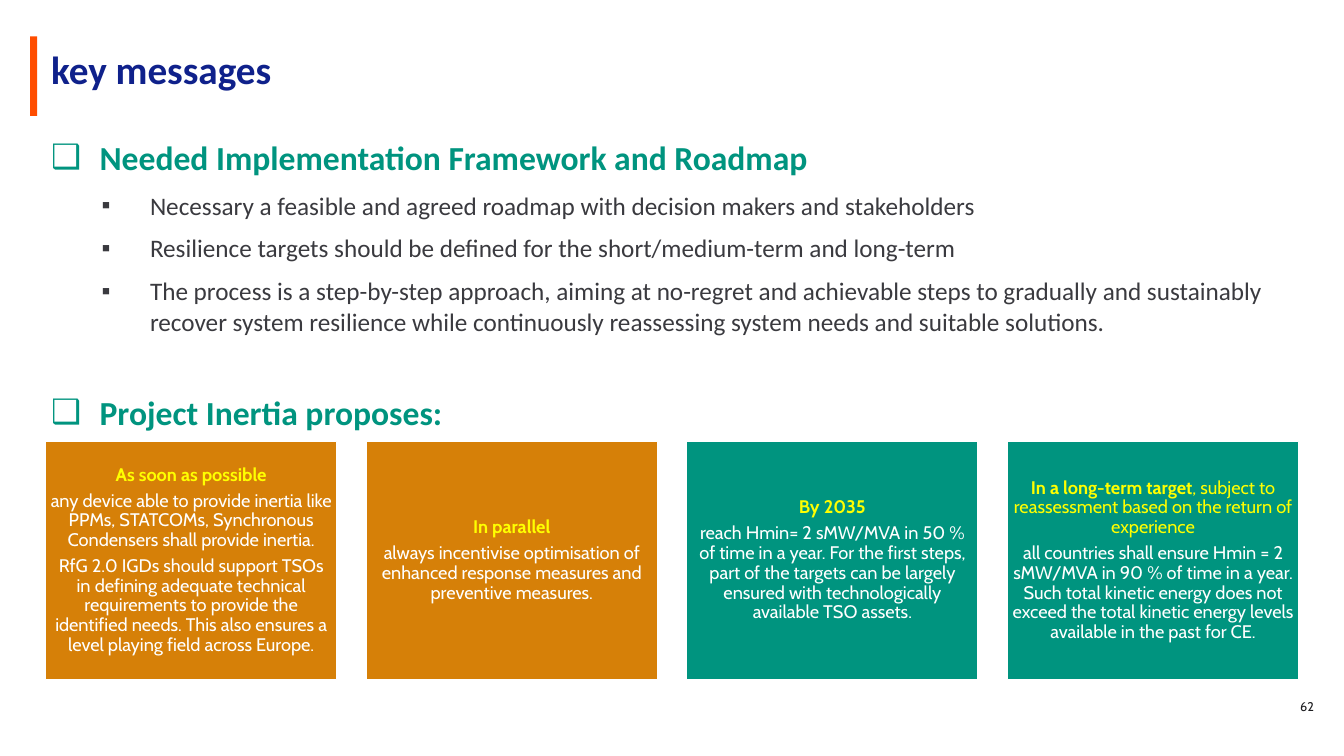
from dataclasses import dataclass

import lxml.etree
import pptx
import pptx.dml.color
import pptx.enum.shapes
import pptx.enum.text
import pptx.oxml.ns
import pptx.util

Inches = pptx.util.Inches
Pt = pptx.util.Pt
ALIGN = pptx.enum.text.PP_ALIGN
MIDDLE = pptx.enum.text.MSO_ANCHOR.MIDDLE


@dataclass(frozen=True)
class Theme:
    navy: str = "0F218B"
    red: str = "FF4D00"
    green: str = "00947F"
    amber: str = "D68008"
    yellow: str = "FFFF00"
    white: str = "FFFFFF"
    gray: str = "3A3A3F"
    ink: str = "1D1D20"
    main: str = "Calibri"
    alt: str = "Cabin"
    title: int = 28
    head: int = 24
    point: int = 18
    card: int = 13
    page: int = 9


@dataclass(frozen=True)
class Item:
    text: str
    head: bool = False
    before: int = 3


@dataclass(frozen=True)
class Card:
    fill: str
    lead: str
    body: tuple[str, ...]
    tail: str = ""


THEME = Theme()

ITEMS = [
    Item("Needed Implementation Framework and Roadmap", head=True, before=0),
    Item("Necessary a feasible and agreed roadmap with decision makers and stakeholders"),
    Item("Resilience targets should be defined for the short/medium-term and long-term"),
    Item("The process is a step-by-step approach, aiming at no-regret and achievable "
         "steps to gradually and sustainably recover system resilience while "
         "continuously reassessing system needs and suitable solutions."),
    Item("Project Inertia proposes:", head=True, before=34),
]

CARDS = [
    Card(THEME.amber, "As soon as possible", (
        "any device able to provide inertia like PPMs, STATCOMs, Synchronous "
        "Condensers shall provide inertia.",
        "RfG 2.0 IGDs should support TSOs in defining adequate technical "
        "requirements to provide the identified needs. This also ensures a level "
        "playing field across Europe.")),
    Card(THEME.amber, "In parallel", (
        "always incentivise optimisation of enhanced response measures and "
        "preventive measures.",)),
    Card(THEME.green, "By 2035", (
        "reach Hmin= 2 sMW/MVA in 50 % of time in a year. For the first steps, "
        "part of the targets can be largely ensured with technologically "
        "available TSO assets.",)),
    Card(THEME.green, "In a long-term target", (
        "all countries shall ensure Hmin = 2 sMW/MVA in 90 % of time in a year. "
        "Such total kinetic energy does not exceed the total kinetic energy "
        "levels available in the past for CE.",),
        tail=", subject to reassessment based on the return of experience"),
]


def style(font, size: int, color: str, face: str, bold: bool = False) -> None:
    font.size = Pt(size)
    font.name = face
    font.bold = bold
    font.color.rgb = pptx.dml.color.RGBColor.from_string(color)


def add_text(slide, left: float, top: float, width: float, height: float):
    box = slide.shapes.add_textbox(Inches(left), Inches(top), Inches(width), Inches(height))
    box.text_frame.word_wrap = True
    return box.text_frame


def add_rect(slide, left: float, top: float, width: float, height: float, fill: str):
    rect = slide.shapes.add_shape(
        pptx.enum.shapes.MSO_SHAPE.RECTANGLE,
        Inches(left), Inches(top), Inches(width), Inches(height))
    rect.shadow.inherit = False
    rect.fill.solid()
    rect.fill.fore_color.rgb = pptx.dml.color.RGBColor.from_string(fill)
    rect.line.fill.background()
    return rect


def next_para(frame, index: int):
    return frame.add_paragraph() if index else frame.paragraphs[0]


def add_bullet(para, mark: str, left: float) -> None:
    """Give the paragraph a bullet with a hanging indent."""
    props = para._p.get_or_add_pPr()
    props.set("marL", str(Inches(left)))
    props.set("indent", str(Inches(-0.48)))
    qn = pptx.oxml.ns.qn
    lxml.etree.SubElement(props, qn("a:buFont")).set("typeface", "Arial")
    lxml.etree.SubElement(props, qn("a:buChar")).set("char", mark)


def add_title(slide) -> None:
    add_rect(slide, 0.3, 0.36, 0.07, 0.79, THEME.red)
    para = add_text(slide, 0.41, 0.42, 11.33, 0.58).paragraphs[0]
    para.text = "key messages"
    para.line_spacing = Pt(32)
    style(para.font, THEME.title, THEME.navy, THEME.main, bold=True)


def add_list(slide, items: list[Item]) -> None:
    frame = add_text(slide, 0.41, 1.31, 12.63, 3.46)
    for index, item in enumerate(items):
        para = next_para(frame, index)
        para.text = item.text
        para.space_before = Pt(item.before)
        para.space_after = Pt(6)
        if item.head:
            add_bullet(para, "❑", 0.48)
            style(para.font, THEME.head, THEME.green, THEME.main, bold=True)
        else:
            add_bullet(para, "▪", 0.98)
            style(para.font, THEME.point, THEME.gray, THEME.main)


def add_card(slide, card: Card, left: float) -> None:
    rect = add_rect(slide, left, 4.38, 2.89, 2.36, card.fill)
    rect.line.color.rgb = pptx.dml.color.RGBColor.from_string(THEME.white)
    rect.line.width = Pt(1)
    frame = rect.text_frame
    frame.word_wrap = True
    frame.vertical_anchor = MIDDLE
    frame.margin_left = frame.margin_right = Inches(0.05)
    frame.margin_top = frame.margin_bottom = Inches(0.05)
    for index, text in enumerate((card.lead, *card.body)):
        para = next_para(frame, index)
        para.alignment = ALIGN.CENTER
        para.line_spacing = 0.9
        para.space_after = Pt(4.5)
        para.text = text
        lead = index == 0
        color = THEME.yellow if lead else THEME.white
        if lead and card.tail:
            para.add_run().text = card.tail
            for run, bold in zip(para.runs, (True, False)):
                style(run.font, THEME.card, color, THEME.alt, bold)
        else:
            style(para.font, THEME.card, color, THEME.alt, bold=lead)


def add_page(slide) -> None:
    frame = add_text(slide, 6.75, 6.82, 6.38, 0.4)
    frame.vertical_anchor = MIDDLE
    para = frame.paragraphs[0]
    para.text = "62"
    para.alignment = ALIGN.RIGHT
    para.line_spacing = Pt(9)
    style(para.font, THEME.page, THEME.ink, THEME.alt)


def main() -> None:
    deck = pptx.Presentation()
    deck.slide_width = Inches(13.33)
    deck.slide_height = Inches(7.5)
    slide = deck.slides.add_slide(deck.slide_layouts[6])
    add_page(slide)
    add_title(slide)
    add_list(slide, ITEMS)
    for index, card in enumerate(CARDS):
        add_card(slide, card, 0.45 + 3.18 * index)
    deck.save("out.pptx")


if __name__ == "__main__":
    main()
